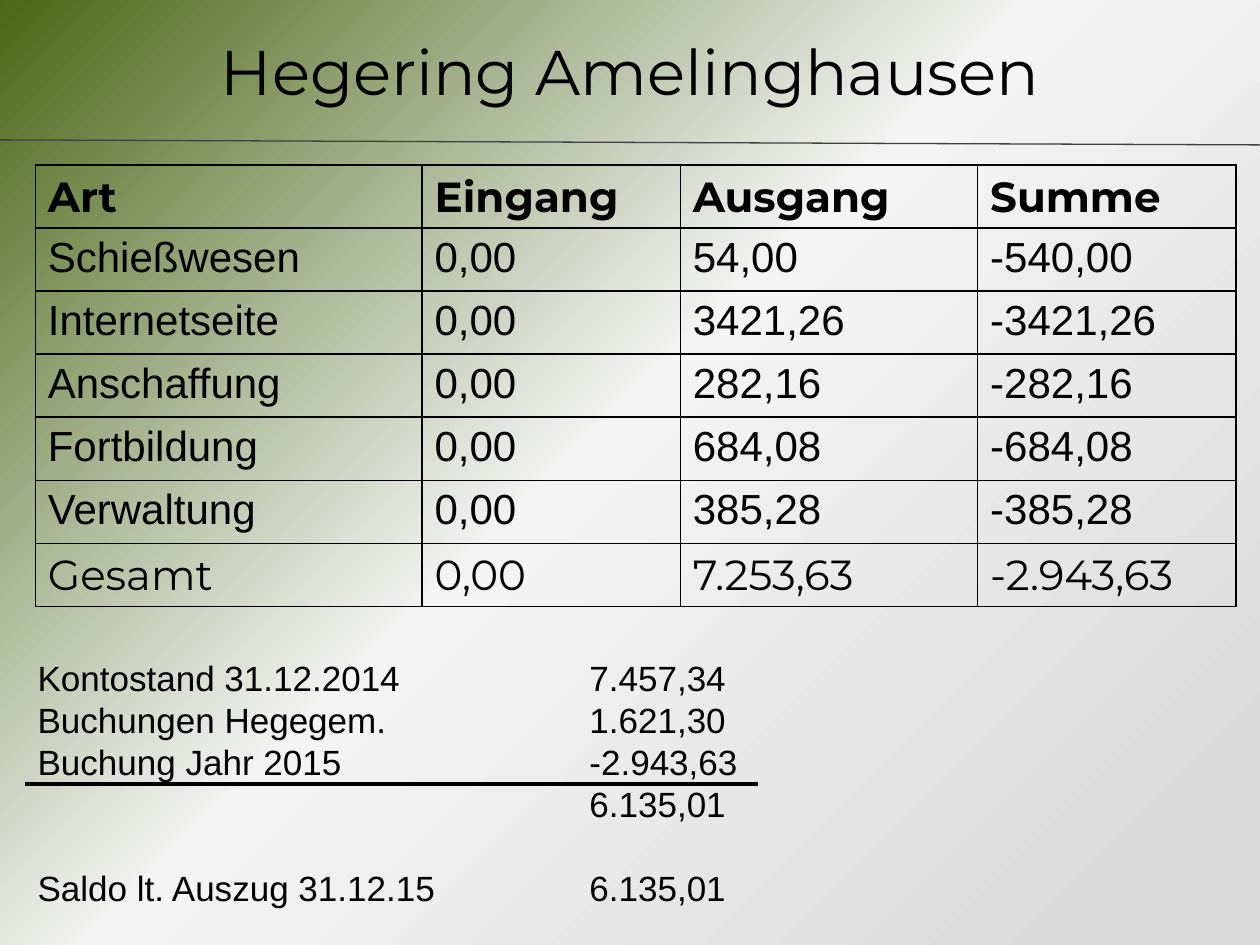
from lxml import etree
from pptx import Presentation
from pptx.dml.color import RGBColor
from pptx.enum.shapes import MSO_CONNECTOR
from pptx.enum.text import PP_ALIGN
from pptx.oxml import parse_xml
from pptx.oxml.ns import nsdecls, qn
from pptx.util import Inches, Pt

BLACK = RGBColor(0x00, 0x00, 0x00)
GREY = RGBColor(0x40, 0x40, 0x40)
GREEN = RGBColor(0x4A, 0x67, 0x17)
PALE = RGBColor(0xF4, 0xF4, 0xF4)
SILVER = RGBColor(0xDA, 0xDA, 0xDA)

HEADING_FONT = "Montserrat"
BODY_FONT = "Arial"
LINE_PITCH = 24

COLUMN_WIDTHS = [3.07, 2.05, 2.36, 2.05]
BOOKINGS = [
    ["Art", "Eingang", "Ausgang", "Summe"],
    ["Schießwesen", "0,00", "54,00", "-540,00"],
    ["Internetseite", "0,00", "3421,26", "-3421,26"],
    ["Anschaffung", "0,00", "282,16", "-282,16"],
    ["Fortbildung", "0,00", "684,08", "-684,08"],
    ["Verwaltung", "0,00", "385,28", "-385,28"],
    ["Gesamt", "0,00", "7.253,63", "-2.943,63"],
]
BALANCE_LABELS = [
    ("Kontostand 31.12.2014", 0),
    ("Buchungen Hegegem.", 0),
    ("Buchung Jahr 2015", 0),
    ("Saldo lt. Auszug 31.12.15", 2),
]
BALANCE_AMOUNTS = [
    ("7.457,34", 0),
    ("1.621,30", 0),
    ("-2.943,63", 0),
    ("6.135,01", 0),
    ("6.135,01", 1),
]


def set_font(paragraph, name, size, bold=False):
    font = paragraph.font
    font.name, font.size, font.bold = name, Pt(size), bold
    font.color.rgb = BLACK


def paint_background(slide):
    stops = "".join(
        f'<a:gs pos="{percent * 1000}"><a:srgbClr val="{color}"/></a:gs>'
        for percent, color in [(0, GREEN), (47, PALE), (92, SILVER)]
    )
    fill = slide.background.fill
    fill.gradient()
    gradient = slide.element.find(".//" + qn("a:gradFill"))
    gradient.getparent().replace(gradient, parse_xml(
        f'<a:gradFill {nsdecls("a")} rotWithShape="1"><a:gsLst>{stops}</a:gsLst>'
        '<a:lin ang="2700000" scaled="0"/></a:gradFill>'
    ))


def add_rule(slide, start, end, color, weight):
    rule = slide.shapes.add_connector(
        MSO_CONNECTOR.STRAIGHT, *(Inches(v) for v in (*start, *end))
    )
    rule.line.color.rgb = color
    rule.line.width = Pt(weight)
    etree.SubElement(rule._element.spPr, qn("a:effectLst"))


def add_title(slide, left, top, width, height):
    title = slide.shapes.add_textbox(*map(Inches, (left, top, width, height)))
    title.text_frame.word_wrap = True
    heading = title.text_frame.paragraphs[0]
    heading.text = "Hegering Amelinghausen"
    heading.alignment = PP_ALIGN.CENTER
    set_font(heading, HEADING_FONT, 36)
    add_rule(slide, (left - 0.02, top + 0.9), (left + width, top + 0.94), GREY, 0.75)


def style_cell(cell, font_name, bold):
    properties = cell._tc.get_or_add_tcPr()
    for side in ("lnL", "lnR", "lnT", "lnB"):
        properties.append(parse_xml(
            f'<a:{side} {nsdecls("a")} w="12700"><a:solidFill>'
            f'<a:srgbClr val="{BLACK}"/></a:solidFill></a:{side}>'
        ))
    cell.fill.background()
    set_font(cell.text_frame.paragraphs[0], font_name, 24, bold)


def add_bookings(slide, left, top, width, height):
    last = len(BOOKINGS) - 1
    table = slide.shapes.add_table(
        len(BOOKINGS), len(COLUMN_WIDTHS), *map(Inches, (left, top, width, height))
    ).table
    table.horz_banding = False
    for column, column_width in zip(table.columns, COLUMN_WIDTHS):
        column.width = Inches(column_width)
    for r, entries in enumerate(BOOKINGS):
        table.rows[r].height = Inches(height / len(BOOKINGS))
        font_name = HEADING_FONT if r in (0, last) else BODY_FONT
        for c, entry in enumerate(entries):
            cell = table.cell(r, c)
            cell.text = entry
            style_cell(cell, font_name, r == 0)


def add_balance_column(slide, entries, left, top, width, height):
    frame = slide.shapes.add_textbox(
        *map(Inches, (left, top, width, height))
    ).text_frame
    frame.word_wrap = True
    for i, (entry, skipped_lines) in enumerate(entries):
        line = frame.paragraphs[0] if i == 0 else frame.add_paragraph()
        line.text = entry
        line.line_spacing = Pt(LINE_PITCH)
        if skipped_lines:
            line.space_before = Pt(LINE_PITCH * skipped_lines)
        set_font(line, BODY_FONT, 20)


def add_balance(slide, left, top, width, height):
    column_width = 3.54
    add_balance_column(slide, BALANCE_LABELS, left, top, column_width, height)
    add_balance_column(
        slide, BALANCE_AMOUNTS, left + width - column_width, top, column_width, height
    )
    add_rule(slide, (left, top + 1.06), (left + 5.82, top + 1.06), BLACK, 2.25)


def main():
    presentation = Presentation()
    presentation.slide_width = Inches(10)
    presentation.slide_height = Inches(7.5)
    slide = presentation.slides.add_slide(presentation.slide_layouts[6])
    paint_background(slide)
    add_title(slide, 0, 0.21, 10, 1.01)
    add_bookings(slide, 0.28, 1.31, sum(COLUMN_WIDTHS), 3.5)
    add_balance(slide, 0.2, 5.16, 7.92, 2.12)
    presentation.save("out.pptx")


if __name__ == "__main__":
    main()
